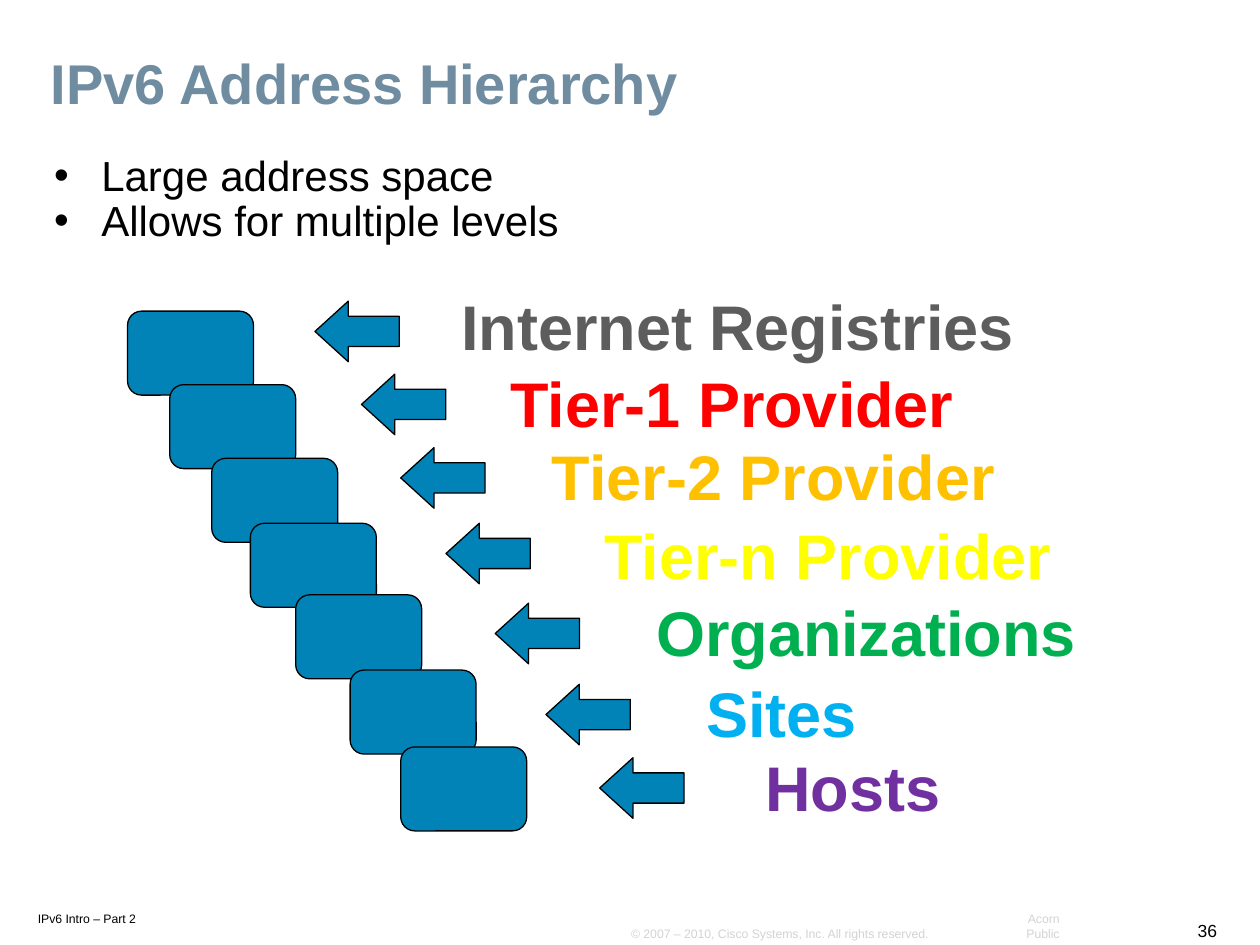
import pptx
import pptx.util
import pptx.dml.color
import pptx.enum.shapes
import pptx.enum.text
from lxml import etree

Pt = pptx.util.Pt
SHAPE = pptx.enum.shapes.MSO_SHAPE
ANCHOR = pptx.enum.text.MSO_ANCHOR
ALIGN = pptx.enum.text.PP_ALIGN
FIT = pptx.enum.text.MSO_AUTO_SIZE.SHAPE_TO_FIT_TEXT

NS = "{http://schemas.openxmlformats.org/drawingml/2006/main}"
TITLE = {"size": Pt(32), "bold": True}
BODY = {"size": Pt(24), "bold": False}
LEVEL = {"size": Pt(36), "bold": True}
SMALL = {"size": Pt(7), "bold": False}
PAGE = {"size": Pt(10), "bold": False}
TIGHT = {"line_spacing": 0.9}
MID = {"line_spacing": 0.9, "alignment": ALIGN.CENTER}
RIGHT = {"alignment": ALIGN.RIGHT}
FOOT = {"vertical_anchor": ANCHOR.BOTTOM, "margin_left": Pt(6.5),
        "margin_right": Pt(6.5), "margin_top": Pt(3),
        "margin_bottom": Pt(3), "auto_size": FIT}
GROW = {"auto_size": FIT}

# label, colour, label (left, top, width), box corner, arrow corner
LEVELS = [
    ("Internet Registries", "5D5D5D", (254.9, 165.6, 333.4), (72.9, 177.8), (180, 172.1)),
    ("Tier-1 Provider", "FF0000", (283, 209.5, 270.7), (97, 219.8), (206.6, 213.8)),
    ("Tier-2 Provider", "FFC000", (306.7, 251.3, 270.7), (121, 261.9), (229, 255.8)),
    ("Tier-n Provider", "FFFF00", (337, 296.6, 272.2), (143.1, 299), (254.9, 299)),
    ("Organizations", "00B050", (366.5, 340.6, 257), (169, 339.9), (283, 344.7)),
    ("Sites", "00B0F0", (396, 386.6, 101.5), (200.1, 382.9), (312, 391)),
    ("Hosts", "7030A0", (429.8, 429.1, 115.2), (229, 426.8), (342.7, 433)),
]


def rgb(code):
    return pptx.dml.color.RGBColor.from_string(code)


def apply(target, values):
    for name, value in values.items():
        setattr(target, name, value)


def bullet(para):
    props = para._p.get_or_add_pPr()
    props.set("marL", str(Pt(27)))
    props.set("indent", str(Pt(-27)))
    etree.SubElement(props, NS + "buFont").set("typeface", "Arial")
    etree.SubElement(props, NS + "buChar").set("char", "•")


def text(slide, area, lines, font, color="000000", para={}, frame={},
         wrap=True, dots=False):
    body = slide.shapes.add_textbox(*map(Pt, area)).text_frame
    body.word_wrap = wrap
    apply(body, frame)
    body.text = "\n".join(lines)
    for item in body.paragraphs:
        apply(item, para)
        if dots:
            bullet(item)
        for run in item.runs:
            run.font.name = "Arial"
            run.font.color.rgb = rgb(color)
            apply(run.font, font)


def block(slide, kind, area):
    shape = slide.shapes.add_shape(kind, *map(Pt, area))
    shape.shadow.inherit = False
    shape.fill.solid()
    shape.fill.fore_color.rgb = rgb("0183B7")
    shape.line.color.rgb = rgb("000000")
    shape.line.width = Pt(0.75)
    return shape


def level(slide, label, color, place, box, arrow):
    block(slide, SHAPE.ROUNDED_RECTANGLE, (*box, 72, 48))
    head = block(slide, SHAPE.LEFT_ARROW, (*arrow, 48.2, 34.6))
    head.adjustments[0] = 0.5
    head.adjustments[1] = 0.55
    text(slide, (*place, 46.8), [label], LEVEL, color, MID, GROW, wrap=False)


def footer(slide):
    text(slide, (15.1, 517, 75.6, 15.1), ["IPv6 Intro – Part 2"], SMALL,
         frame=FOOT)
    text(slide, (676.8, 522, 25.2, 18.7), ["36"], PAGE, para=RIGHT,
         frame=FOOT, wrap=False)
    text(slide, (354.2, 525.6, 185, 15.1),
         ["© 2007 – 2010, Cisco Systems, Inc. All rights reserved."],
         SMALL, "D3D3D3", frame=FOOT, wrap=False)
    text(slide, (560.9, 525.6, 51.1, 15.1), ["Acorn Public"], SMALL,
         "D3D3D3", RIGHT, FOOT, wrap=False)


def main():
    deck = pptx.Presentation()
    deck.slide_width, deck.slide_height = Pt(720), Pt(540)
    slide = deck.slides.add_slide(deck.slide_layouts[6])
    footer(slide)
    text(slide, (22, 28.8, 671, 43.2), ["IPv6 Address Hierarchy"], TITLE,
         "708CA1", TIGHT)
    for row in LEVELS:
        level(slide, *row)
    text(slide, (23.8, 85, 360, 59.8),
         ["Large address space", "Allows for multiple levels"], BODY,
         para=TIGHT, frame=GROW, dots=True)
    deck.save("out.pptx")


if __name__ == "__main__":
    main()
